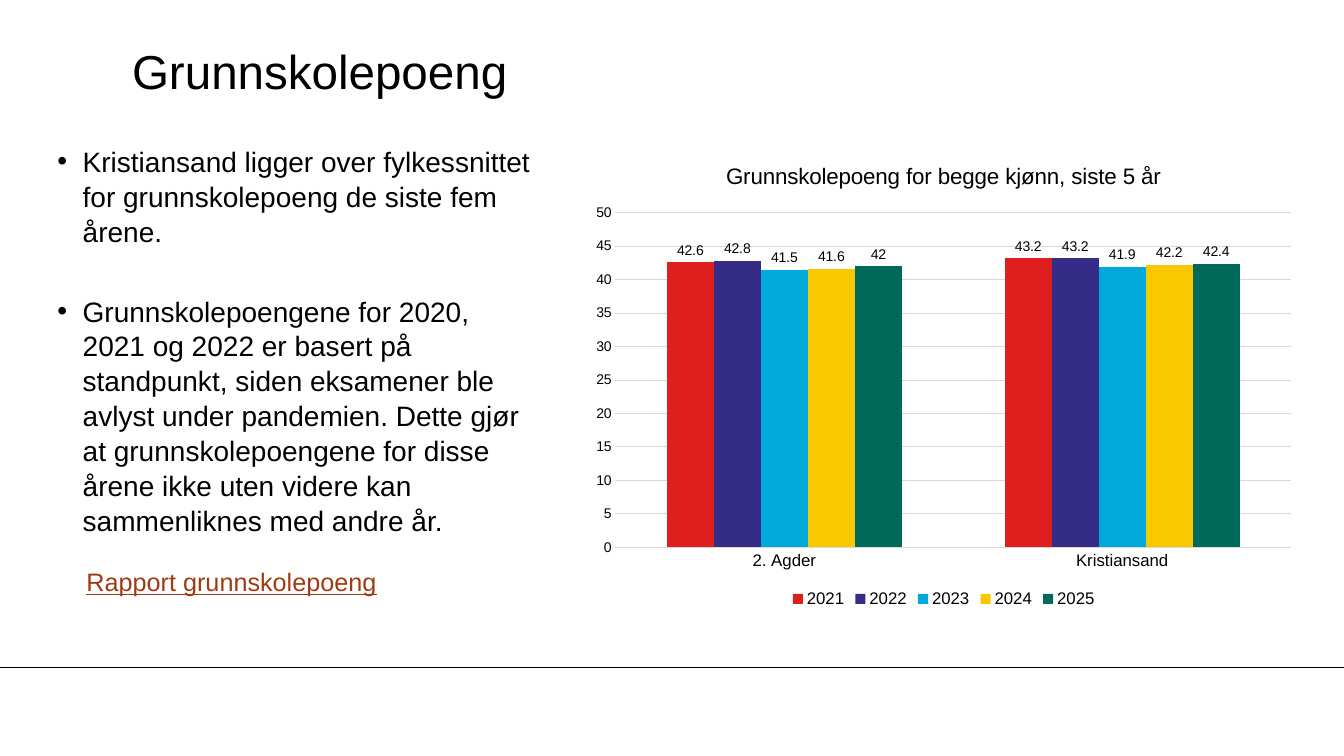
from lxml import etree
from pptx import Presentation
from pptx import util as u
from pptx.chart.data import CategoryChartData
from pptx.dml.color import RGBColor
from pptx.enum import chart as ch, shapes, text
from pptx.oxml.ns import qn

PX = 9144  # 100 px to the inch
WIDTH, HEIGHT = 1333, 750
FONT = "Arial"
COLORS = {"text": "000000", "link": "9F3A14", "grid": "D9D9D9"}
YEARS = {
    "2021": ((42.6, 43.2), "DF1F1D"),
    "2022": ((42.8, 43.2), "342C86"),
    "2023": ((41.5, 41.9), "00A9DA"),
    "2024": ((41.6, 42.2), "FAC800"),
    "2025": ((42, 42.4), "00695A"),
}
REGIONS = ("2. Agder", "Kristiansand")
POINTS = (
    "Kristiansand ligger over fylkessnittet for grunnskolepoeng de siste fem årene.",
    "Grunnskolepoengene for 2020, 2021 og 2022 er basert på standpunkt, siden "
    "eksamener ble avlyst under pandemien. Dette gjør at grunnskolepoengene for "
    "disse årene ikke uten videre kan sammenliknes med andre år.",
)


def px(*lengths):
    return [u.Emu(length * PX) for length in lengths]


def rgb(name):
    return RGBColor.from_string(COLORS.get(name, name))


def style(font, size, color="text"):
    font.name, font.size, font.bold = FONT, u.Pt(size), False
    font.color.rgb = rgb(color)


def set_line(line, color):
    line.color.rgb = rgb(color)
    line.width = u.Pt(0.75)


def clear_insets(frame):
    frame.margin_left = frame.margin_top = frame.margin_right = frame.margin_bottom = 0


def add_footer_rule(slide):
    rule = slide.shapes.add_connector(
        shapes.MSO_CONNECTOR.STRAIGHT, *px(0, 662, WIDTH, 662))
    set_line(rule.line, "text")
    etree.SubElement(rule._element.spPr, qn("a:effectLst"))


def set_title(slide, wording):
    title = slide.shapes.title
    title.left, title.top, title.width, title.height = px(131, 32, 1110, 75)
    frame = title.text_frame
    clear_insets(frame)
    frame.vertical_anchor = text.MSO_ANCHOR.MIDDLE
    frame.text = wording
    frame.paragraphs[0].alignment = text.PP_ALIGN.LEFT
    style(frame.paragraphs[0].runs[0].font, 34)


def add_textbox(slide, *box):
    frame = slide.shapes.add_textbox(*px(*box)).text_frame
    frame.word_wrap = True
    return frame


def add_bullets(slide, points):
    frame = add_textbox(slide, 57, 142, 472, 390)
    clear_insets(frame)
    frame.text = "\n".join(points)
    for index, point in enumerate(frame.paragraphs):
        properties = point._p.get_or_add_pPr()
        properties.set("marL", str(25 * PX))
        properties.set("indent", str(-25 * PX))
        etree.SubElement(properties, qn("a:buFont"), typeface=FONT)
        etree.SubElement(properties, qn("a:buChar"), char="•")
        point.line_spacing = 1.04
        if index:
            point.space_before = u.Pt(32)
        style(point.runs[0].font, 20)


def add_report_label(slide, wording):
    frame = add_textbox(slide, 76, 557, 330, 40)
    frame.text = wording
    label = frame.paragraphs[0].runs[0].font
    style(label, 18, "link")
    label.underline = True


def add_points_chart(slide):
    data = CategoryChartData()
    data.categories = REGIONS
    for year, (values, _) in YEARS.items():
        data.add_series(year, values)
    chart = slide.shapes.add_chart(
        ch.XL_CHART_TYPE.COLUMN_CLUSTERED, *px(577, 142, 718, 465), data).chart
    style(chart.font, 10)

    chart.has_title = True
    heading = chart.chart_title.text_frame
    heading.text = "Grunnskolepoeng for begge kjønn, siste 5 år"
    style(heading.paragraphs[0].runs[0].font, 16)
    chart.chart_title.include_in_layout = False

    chart.has_legend = True
    chart.legend.position = ch.XL_LEGEND_POSITION.BOTTOM
    chart.legend.include_in_layout = False
    style(chart.legend.font, 12)

    for axis, size in ((chart.category_axis, 12), (chart.value_axis, 10)):
        axis.major_tick_mark = axis.minor_tick_mark = ch.XL_TICK_MARK.NONE
        style(axis.tick_labels.font, size)
    set_line(chart.category_axis.format.line, "grid")
    scores = chart.value_axis
    scores.minimum_scale, scores.maximum_scale, scores.major_unit = 0, 50, 5
    scores.format.line.fill.background()
    set_line(scores.major_gridlines.format.line, "grid")

    plot = chart.plots[0]
    plot.gap_width, plot.overlap = 219, 0
    plot.vary_by_categories = False
    for series, (_, color) in zip(plot.series, YEARS.values()):
        series.format.fill.solid()
        series.format.fill.fore_color.rgb = rgb(color)
        labels = series.data_labels
        labels.show_value = True
        labels.position = ch.XL_LABEL_POSITION.OUTSIDE_END
        style(labels.font, 10)


def main():
    deck = Presentation()
    deck.slide_width, deck.slide_height = px(WIDTH, HEIGHT)
    slide = deck.slides.add_slide(deck.slide_layouts.get_by_name("Title Only"))
    add_footer_rule(slide)
    set_title(slide, "Grunnskolepoeng")
    add_bullets(slide, POINTS)
    add_report_label(slide, "Rapport grunnskolepoeng")
    add_points_chart(slide)
    deck.save("out.pptx")


if __name__ == "__main__":
    main()
